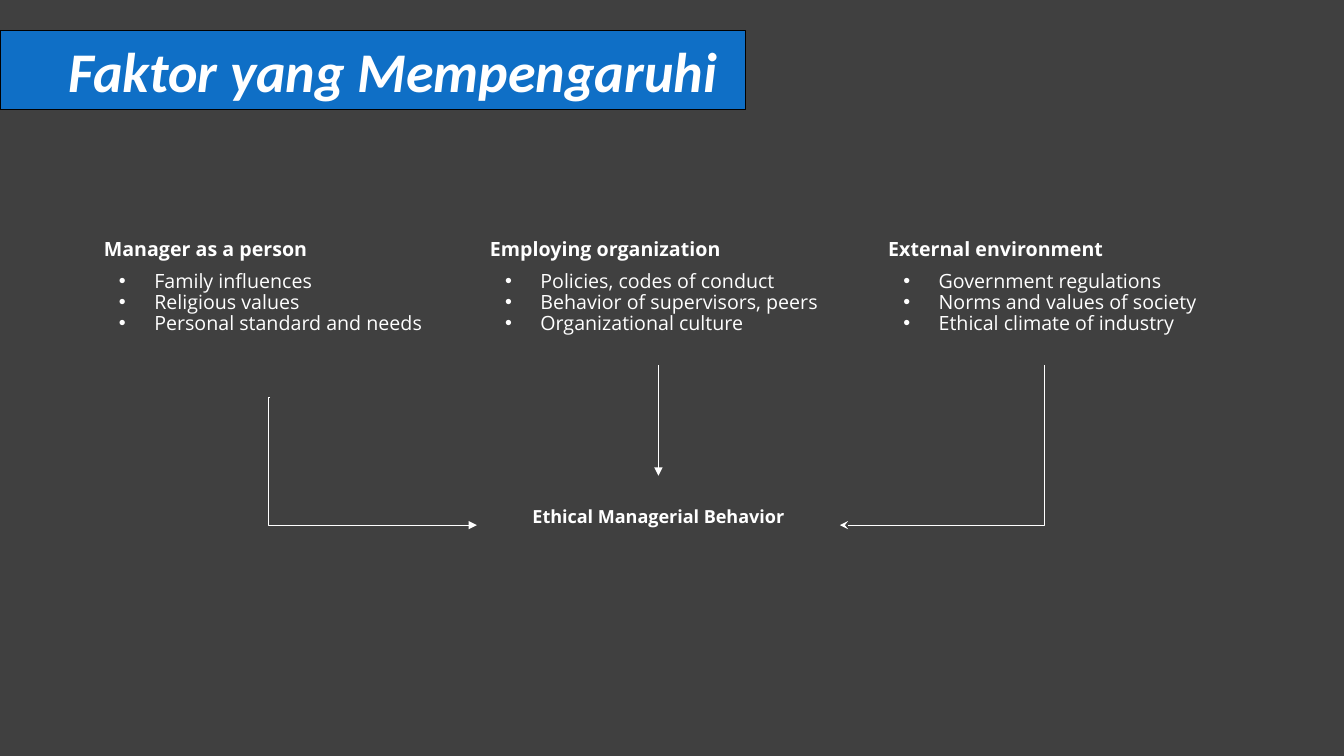
from lxml import etree
from pptx import Presentation
from pptx.dml.color import RGBColor
from pptx.enum.shapes import MSO_CONNECTOR as CONN, MSO_SHAPE
from pptx.enum.text import MSO_ANCHOR, PP_ALIGN
from pptx.oxml.ns import qn
from pptx.util import Inches, Pt

COLORS = {"background": "404040", "banner": "0F6FC6", "outline": "000000", "white": "FFFFFF"}
BODY_FONT = "Open Sans"
FACTORS_TOP, FACTORS_HEIGHT = 2.32, 1.3
FACTORS = [
    (0.9, 3.48, "Manager as a person",
     ["Family influences", "Religious values", "Personal standard and needs"]),
    (4.73, 3.6, "Employing organization",
     ["Policies, codes of conduct", "Behavior of supervisors, peers", "Organizational culture"]),
    (8.68, 3.34, "External environment",
     ["Government regulations", "Norms and values of society", "Ethical climate of industry"]),
]


def color(name):
    return RGBColor.from_string(COLORS[name])


def add_box(slide, x, y, w, h, anchor=MSO_ANCHOR.TOP):
    sp = slide.shapes.add_textbox(Inches(x), Inches(y), Inches(w), Inches(h))
    tf = sp.text_frame
    tf.word_wrap = True
    tf.vertical_anchor = anchor
    tf.margin_left = tf.margin_right = Inches(0.13)
    tf.margin_top = tf.margin_bottom = Inches(0.06)
    return sp


def style(p, size, font=BODY_FONT, bold=False, italic=False):
    for r in p.runs:
        r.font.name, r.font.size = font, Pt(size)
        r.font.bold, r.font.italic = bold, italic
        r.font.color.rgb = color("white")


def add_bullet(p):
    pPr = p._p.get_or_add_pPr()
    pPr.set("marL", str(Inches(0.5)))
    pPr.set("indent", str(Inches(-0.35)))
    bu_color = etree.SubElement(pPr, qn("a:buClr"))
    etree.SubElement(bu_color, qn("a:srgbClr"), val=COLORS["white"])
    etree.SubElement(pPr, qn("a:buFont"), typeface="Arial")
    etree.SubElement(pPr, qn("a:buChar"), char="•")


def add_title(slide, text):
    banner = slide.shapes.add_shape(MSO_SHAPE.RECTANGLE, 0, Inches(0.3), Inches(7.39), Inches(0.79))
    banner.shadow.inherit = False
    banner.fill.solid()
    banner.fill.fore_color.rgb = color("banner")
    banner.line.color.rgb = color("outline")
    banner.line.width = Pt(0.75)
    p = add_box(slide, 0.4, 0.3, 6.99, 0.79, MSO_ANCHOR.MIDDLE).text_frame.paragraphs[0]
    p.text = text
    p.alignment = PP_ALIGN.CENTER
    style(p, 40, "Calibri", bold=True, italic=True)


def add_factor(slide, x, w, heading, items):
    sp = add_box(slide, x, FACTORS_TOP, w, FACTORS_HEIGHT)
    tf = sp.text_frame
    tf.text = "\n".join([heading] + items)
    for i, p in enumerate(tf.paragraphs):
        p.line_spacing = 0.88
        if i == 1:
            p.space_before = Pt(8.2)
        if i > 0:
            add_bullet(p)
        style(p, 14, bold=i == 0)
    return sp


def add_outcome(slide, text):
    p = add_box(slide, 4.73, 5, 3.6, 0.42).text_frame.paragraphs[0]
    p.text = text
    p.alignment = PP_ALIGN.CENTER
    p.line_spacing = 0.8
    style(p, 12.9, bold=True)


def add_arrow(slide, kind, start, end, head="triangle"):
    cxn = slide.shapes.add_connector(kind, *(Inches(v) for v in (*start, *end)))
    cxn.line.color.rgb = color("white")
    cxn.line.width = Pt(0.75)
    etree.SubElement(cxn.line._get_or_add_ln(), qn("a:tailEnd"), type=head)
    etree.SubElement(cxn._element.spPr, qn("a:effectLst"))
    return cxn


def set_bend(cxn, adjust):
    """Place the middle segment, in 1/100000 of the connector's width."""
    guides = cxn._element.spPr.find(qn("a:prstGeom")).get_or_add_avLst()
    etree.SubElement(guides, qn("a:gd"), name="adj1", fmla=f"val {adjust}")


def turn_corner(cxn):
    """Make an elbow running down and then left: one corner, turned by 90 degrees."""
    spPr = cxn._element.spPr
    spPr.find(qn("a:prstGeom")).set("prst", "bentConnector2")
    w, h = cxn.width, cxn.height
    center_x, center_y = cxn.left + w // 2, cxn.top + h // 2
    cxn.left, cxn.top = center_x - h // 2, center_y - w // 2
    cxn.width, cxn.height = h, w
    xfrm = spPr.find(qn("a:xfrm"))
    xfrm.attrib.pop("flipH", None)
    xfrm.set("rot", "5400000")


def main():
    prs = Presentation()
    prs.slide_width, prs.slide_height = Inches(13.33), Inches(7.5)
    slide = prs.slides.add_slide(prs.slide_layouts[6])
    slide.background.fill.solid()
    slide.background.fill.fore_color.rgb = color("background")

    add_title(slide, "Faktor yang Mempengaruhi")
    person, organization, environment = [add_factor(slide, *factor) for factor in FACTORS]
    add_outcome(slide, "Ethical Managerial Behavior")

    down = add_arrow(slide, CONN.STRAIGHT, (6.53, 3.62), (6.53, 4.72))
    down.begin_connect(organization, 2)
    set_bend(add_arrow(slide, CONN.ELBOW, (2.68, 3.94), (4.73, 5.21)), -900)
    turn_corner(add_arrow(slide, CONN.ELBOW, (10.36, 3.62), (8.33, 5.21), "stealth"))
    prs.save("out.pptx")


if __name__ == "__main__":
    main()
